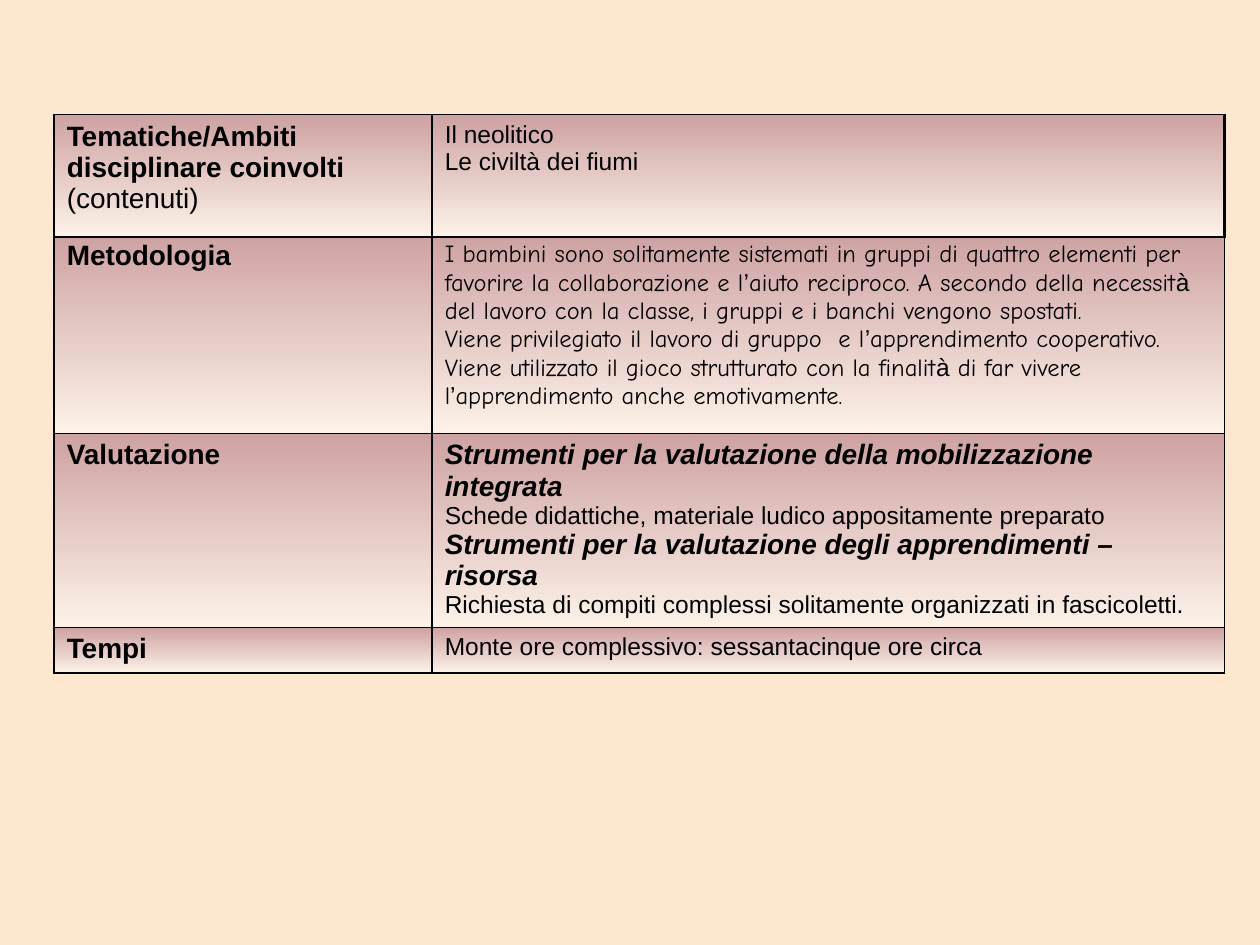
from dataclasses import dataclass
from itertools import groupby

from lxml.etree import SubElement
from pptx import Presentation
from pptx.dml.color import RGBColor
from pptx.oxml.ns import qn
from pptx.util import Inches, Pt


@dataclass(frozen=True)
class Theme:
    """Colours, fonts and type sizes of the slide."""
    back: str = "FDE7CF"
    top: str = "CEA2A2"
    base: str = "FCF2E8"
    ink: str = "000000"
    sans: str = "Arial"
    hand: str = "Comic Neue"
    head: int = 16
    body: int = 14
    rule: float = 1
    thick: float = 2.25


class Page:
    """Draws elements on one slide in one theme."""

    def __init__(self, slide, theme):
        """Keep the slide and theme, and paint the background."""
        self.slide, self.theme = slide, theme
        fill = slide.background.fill
        fill.solid()
        fill.fore_color.rgb = RGBColor.from_string(theme.back)

    def table(self, left, top, widths, heights, rows):
        """Add a table whose cells are lists of (text, style) lines."""
        frame = self.slide.shapes.add_table(
            len(rows), len(widths), Inches(left), Inches(top),
            Inches(sum(widths)), Inches(sum(heights)))
        table = frame.table
        table.first_row = table.horz_banding = False
        for column, width in zip(table.columns, widths):
            column.width = Inches(width)
        for row, height, cells in zip(table.rows, heights, rows):
            row.height = Inches(height)
            for cell, lines in zip(row.cells, cells):
                self.border(cell)
                self.shade(cell)
                self.label(cell.text_frame, lines)
        return table

    def border(self, cell):
        """Rule all four sides of a cell."""
        props = cell._tc.get_or_add_tcPr()
        for side in "LRTB":
            line = SubElement(props, qn(f"a:ln{side}"), w=str(Pt(self.theme.rule)))
            fill = SubElement(line, qn("a:solidFill"))
            SubElement(fill, qn("a:srgbClr"), val=self.theme.ink)

    def thicken(self, cell, side):
        """Make one side of a ruled cell heavier."""
        line = cell._tc.tcPr.find(qn(f"a:ln{side}"))
        line.set("w", str(Pt(self.theme.thick)))

    def shade(self, cell):
        """Fill a cell with the downward gradient."""
        cell.fill.gradient()
        cell.fill.gradient_angle = 270
        for stop, shade in zip(cell.fill.gradient_stops, (self.theme.top, self.theme.base)):
            stop.color.rgb = RGBColor.from_string(shade)

    def label(self, frame, lines):
        """Set styled lines, one paragraph each."""
        theme = self.theme
        frame.text = "\n".join(text for text, style in lines)
        for para, (text, style) in zip(frame.paragraphs, lines):
            if style == "hand":
                para.clear()
                for sans, part in groupby(text, lambda sign: sign in "’à"):
                    run = para.add_run()
                    run.text = "".join(part)
                    run.font.name = theme.sans if sans else theme.hand
            for run in para.runs:
                font = run.font
                font.name = font.name or theme.sans
                font.size = Pt(theme.body if style in ("body", "hand") else theme.head)
                font.bold = style in ("head", "tool")
                font.italic = style == "tool"
                font.color.rgb = RGBColor.from_string(theme.ink)


TOPICS = [[
    [("Tematiche/Ambiti disciplinare coinvolti", "head"), ("(contenuti)", "plain")],
    [("Il neolitico", "body"), ("Le civiltà dei fiumi", "body")],
]]

PLAN = [
    [[("Metodologia", "head")],
     [("I bambini sono solitamente sistemati in gruppi di quattro elementi per "
       "favorire la collaborazione e l’aiuto reciproco. A secondo della necessità "
       "del lavoro con la classe, i gruppi e i banchi vengono spostati.", "hand"),
      ("Viene privilegiato il lavoro di gruppo  e l’apprendimento cooperativo.", "hand"),
      ("Viene utilizzato il gioco strutturato con la finalità di far vivere "
       "l’apprendimento anche emotivamente.", "hand")]],
    [[("Valutazione", "head")],
     [("Strumenti per la valutazione della mobilizzazione integrata", "tool"),
      ("Schede didattiche, materiale ludico appositamente preparato", "body"),
      ("Strumenti per la valutazione degli apprendimenti – risorsa", "tool"),
      ("Richiesta di compiti complessi solitamente organizzati in fascicoletti.", "body")]],
    [[("Tempi", "head")],
     [("Monte ore complessivo: sessantacinque ore circa", "body")]],
]


def main():
    """Build and save the slide."""
    deck = Presentation()
    deck.slide_width, deck.slide_height = Inches(10), Inches(7.5)
    page = Page(deck.slides.add_slide(deck.slide_layouts[6]), Theme())
    left, widths = 0.43, (3, 6.29)
    page.table(left, 1.86, widths, (1.58, 1.54, 0.36), PLAN)
    topics = page.table(left, 0.91, widths, (0.97,), TOPICS)
    page.thicken(topics.cell(0, 1), "R")
    deck.save("out.pptx")


if __name__ == "__main__":
    main()
